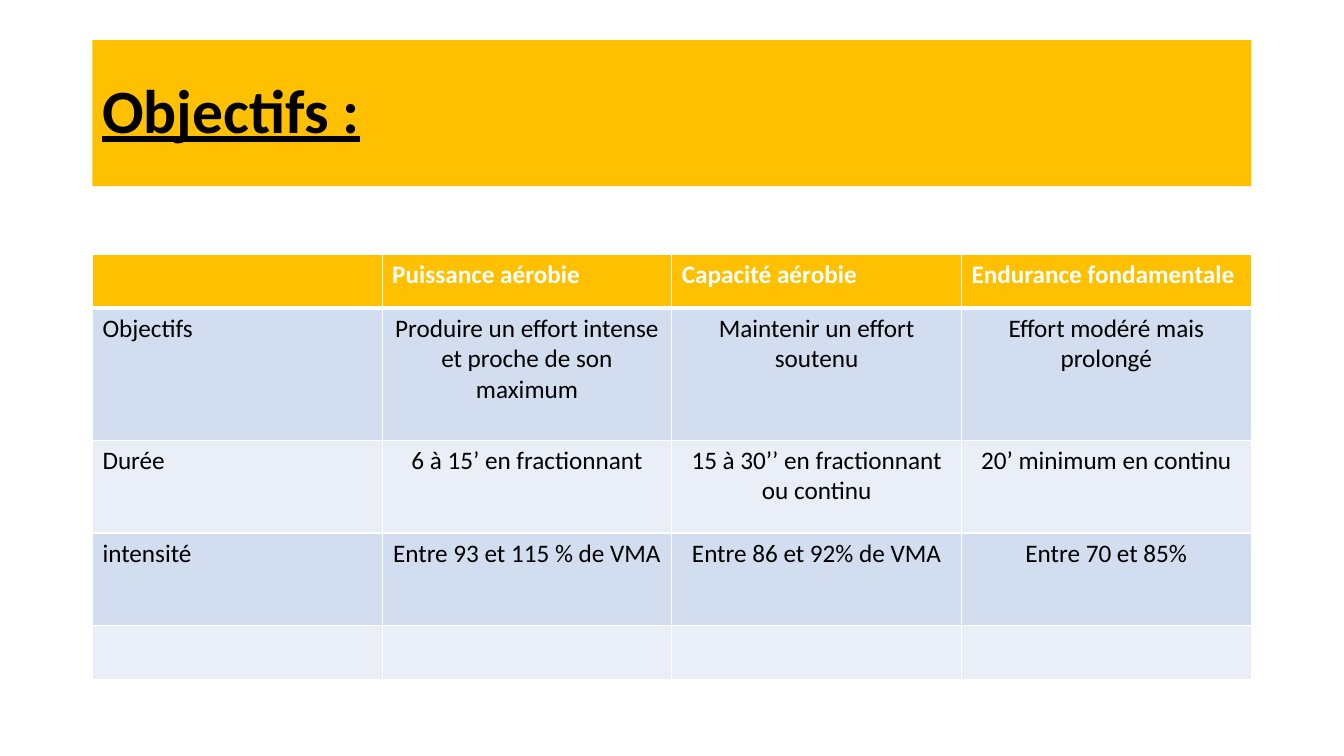
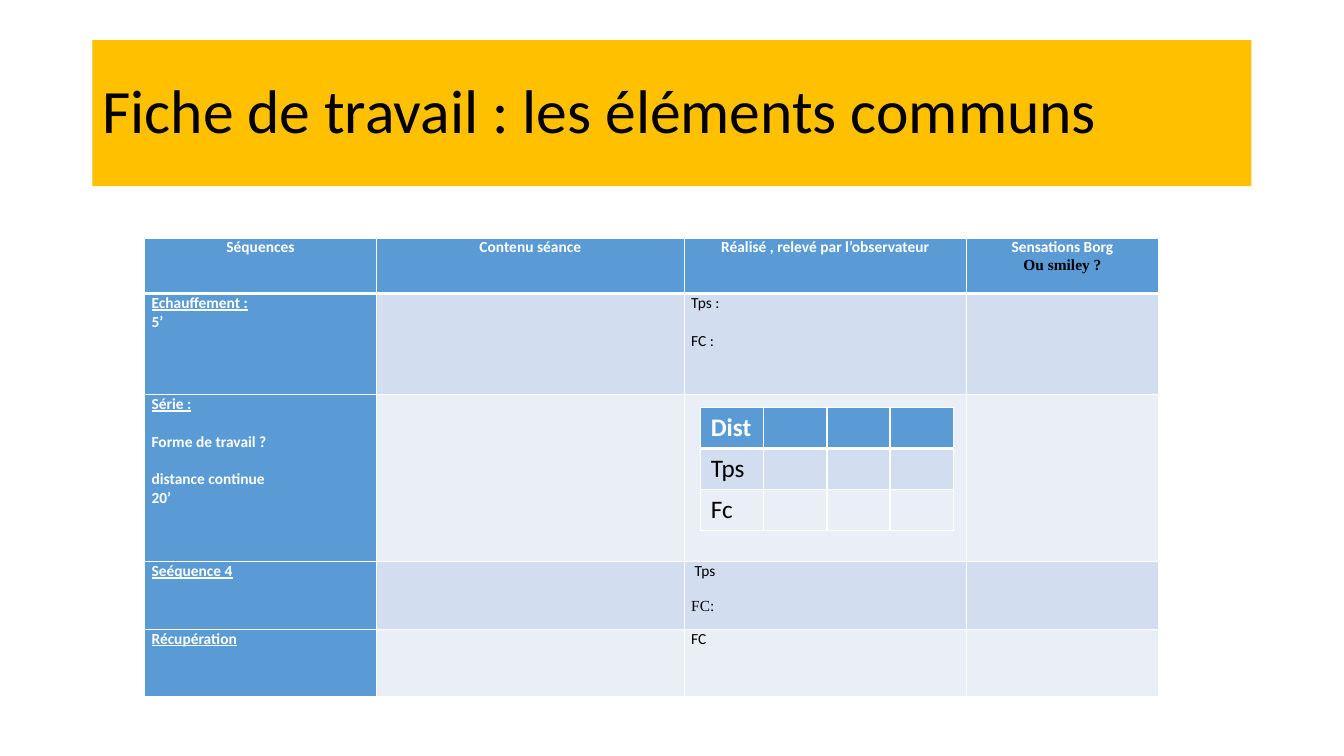
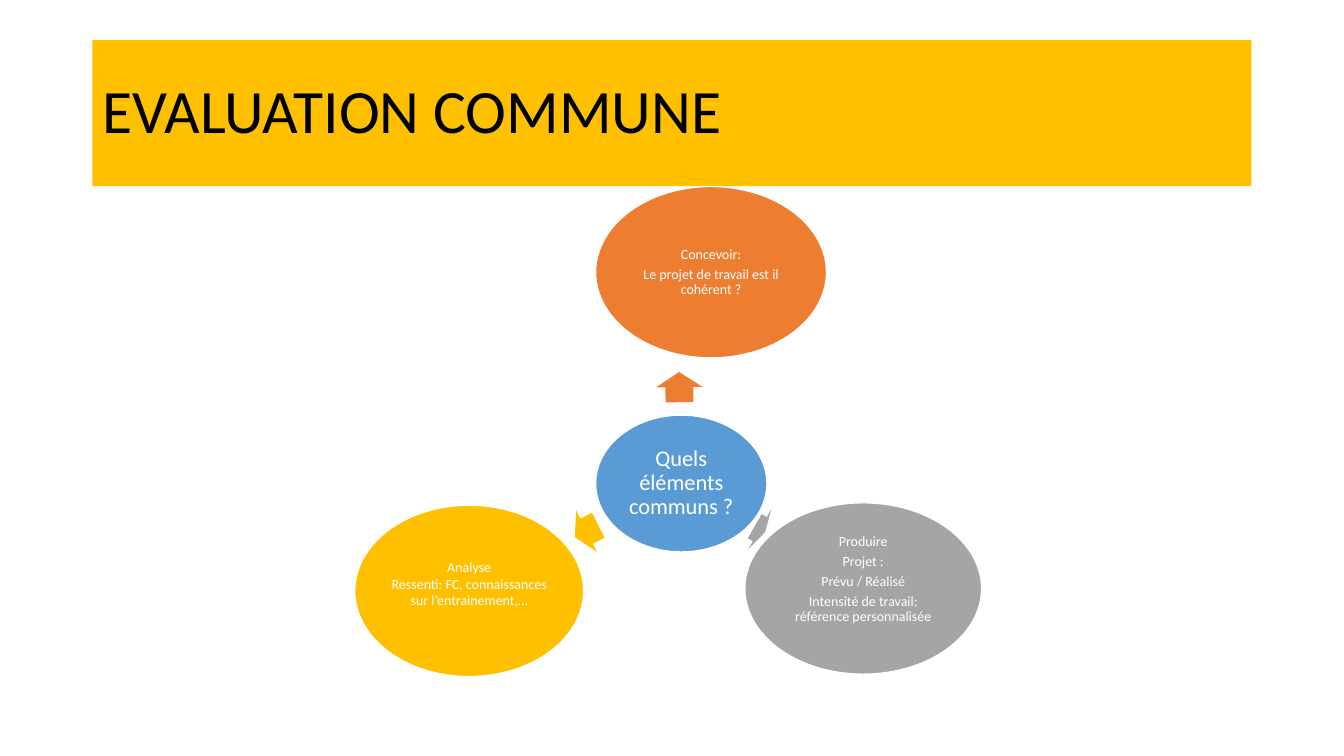
from lxml.etree import SubElement
from pptx import Presentation
from pptx.dml.color import RGBColor as RGB
from pptx.enum.shapes import MSO_SHAPE as SHAPE
from pptx.enum.text import MSO_ANCHOR as ANCHOR, PP_ALIGN as ALIGN
from pptx.oxml.ns import qn
from pptx.util import Cm, Pt

COLORS = {
    "gold": "FFC000", "blue": "5B9BD5", "orange": "ED7D31", "grey": "A5A5A5",
    "band_dark": "D2DEEF", "band_light": "EAEFF7",
    "white": "FFFFFF", "black": "000000",
}
BLANK_LINE = 13.4  # points, one line of 11 pt text


def color(name):
    return RGB.from_string(COLORS[name])


# --- Text ---

def add_text(tf, lines, **style):
    """Write lines, each a string or (string, style changes)."""
    for i, line in enumerate(lines):
        text, changes = (line, {}) if isinstance(line, str) else line
        st = {**style, **changes}
        p = tf.paragraphs[0] if i == 0 else tf.add_paragraph()
        p.alignment = st.get("align", ALIGN.LEFT)
        p.line_spacing = st.get("spacing", 1.0)
        p.space_before = Pt(st.get("before", 0))
        p.space_after = Pt(st.get("after", 0))
        r = p.add_run()
        r.text = text
        r.font.name = st.get("font", "Calibri")
        r.font.size = Pt(st["size"])
        r.font.bold = st.get("bold", False)
        r.font.underline = st.get("underline", False)
        r.font.color.rgb = color(st.get("color", "black"))


# --- Shapes ---

def add_filled(s, kind, box, fill, line=None):
    sp = s.shapes.add_shape(kind, *map(Cm, box))
    sp.shadow.inherit = False
    sp.fill.solid()
    sp.fill.fore_color.rgb = color(fill)
    if line:
        sp.line.color.rgb = color(line)
        sp.line.width = Pt(1)
    else:
        sp.line.fill.background()
    return sp


def add_titled_slide(prs, title, **style):
    s = prs.slides.add_slide(prs.slide_layouts[6])
    sp = add_filled(s, SHAPE.RECTANGLE, (2.33, 1.01, 29.21, 3.68), "gold")
    sp.text_frame.word_wrap = True
    sp.text_frame.vertical_anchor = ANCHOR.MIDDLE
    add_text(sp.text_frame, [title], size=44, spacing=0.9, **style)
    return s


def add_bubble(s, box, fill, lines, size=10, bottom=0.03, **style):
    sp = add_filled(s, SHAPE.OVAL, box, fill, "white")
    tf = sp.text_frame
    tf.word_wrap = True
    tf.vertical_anchor = ANCHOR.MIDDLE
    tf.margin_left = tf.margin_right = tf.margin_top = Cm(0.03)
    tf.margin_bottom = Cm(bottom)
    add_text(tf, lines, size=size, color="white", align=ALIGN.CENTER, **style)


def add_arrow(s, box, fill, rotation):
    sp = add_filled(s, SHAPE.RIGHT_ARROW, box, fill)
    sp.adjustments[0], sp.adjustments[1] = 0.6, 0.5
    sp.rotation = rotation


# --- Tables ---

def set_borders(cell, row):
    widths = {"L": 1, "R": 1, "T": 3 if row == 1 else 1, "B": 3 if row == 0 else 1}
    tc_pr = cell._tc.get_or_add_tcPr()
    for i, (side, width) in enumerate(widths.items()):
        ln = SubElement(tc_pr, qn("a:ln" + side), w=str(Pt(width)))
        fill = SubElement(ln, qn("a:solidFill"))
        SubElement(fill, qn("a:srgbClr"), val=COLORS["white"])
        tc_pr.insert(i, ln)


def add_banded_table(s, left, top, widths, heights, rows, head_fill, size,
                     head_align=ALIGN.LEFT, body_align=ALIGN.LEFT,
                     head_column=False, margins=None):
    """Cells hold lists of lines; rows alternate between two bands."""
    table = s.shapes.add_table(len(heights), len(widths), Cm(left), Cm(top),
                               Cm(sum(widths)), Cm(sum(heights))).table
    for col, width in zip(table.columns, widths):
        col.width = Cm(width)
    for row, height in zip(table.rows, heights):
        row.height = Cm(height)
    for i, row in enumerate(rows):
        for j, lines in enumerate(row):
            cell = table.cell(i, j)
            is_head = i == 0 or (head_column and j == 0)
            band = "band_dark" if i % 2 else "band_light"
            cell.fill.solid()
            cell.fill.fore_color.rgb = color(head_fill if is_head else band)
            set_borders(cell, i)
            if margins:
                cell.margin_left = cell.margin_right = Cm(margins[0])
                cell.margin_top = cell.margin_bottom = Cm(margins[1])
            align = head_align if i == 0 else body_align if j else ALIGN.LEFT
            add_text(cell.text_frame, lines, size=size, bold=is_head, align=align,
                     color="white" if is_head else "black")


# --- Slides ---

def build_goals(prs):
    s = add_titled_slide(prs, "Objectifs :", bold=True, underline=True)
    rows = [
        [[], ["Puissance aérobie"], ["Capacité aérobie"], ["Endurance fondamentale"]],
        [["Objectifs"], ["Produire un effort intense et proche de son maximum"],
         ["Maintenir un effort soutenu"], ["Effort modéré mais prolongé"]],
        [["Durée"], ["6 à 15’ en fractionnant"],
         ["15 à 30’’ en fractionnant ou continu"], ["20’ minimum en continu"]],
        [["intensité"], ["Entre 93 et 115 % de VMA"],
         ["Entre 86 et 92% de VMA"], ["Entre 70 et 85%"]],
        [[]] * 4,
    ]
    add_banded_table(s, 2.33, 6.41, [7.3] * 4, [1.35, 3.33, 2.34, 2.34, 1.35],
                     rows, "gold", 18, body_align=ALIGN.CENTER)


def build_worksheet(prs):
    s = add_titled_slide(prs, "Fiche de travail : les éléments communs")
    under = {"underline": True}
    gap = {"before": BLANK_LINE}
    times = {"font": "Times New Roman"}
    rows = [
        [["Séquences"], ["Contenu séance"], ["Réalisé , relevé par l’observateur"],
         ["Sensations Borg", ("Ou smiley ?", {**times, "color": "black"})]],
        [[("Echauffement :", under), "5’"], [], ["Tps :", ("FC :", gap)], []],
        [[("Série :", under), ("Forme de travail ?", gap),
          ("distance continue", gap), "20’"], [], [], []],
        [[("Seéquence 4", under)], [], [" Tps", ("FC:", {**times, "before": 12})], []],
        [[("Récupération", under)], [], ["FC"], []],
    ]
    add_banded_table(s, 3.64, 6.0, [5.85, 7.75, 7.12, 4.83],
                     [1.4, 2.54, 4.22, 1.7, 1.7], rows, "blue", 11,
                     head_align=ALIGN.CENTER, head_column=True, margins=(0.18, 0))
    # Observer's record inside the series row
    record = [[[label], [], [], []] for label in ("Dist", "Tps", "Fc")]
    add_banded_table(s, 17.66, 10.27, [1.59] * 4, [1.03] * 3, record, "blue", 18)


def build_evaluation(prs):
    s = add_titled_slide(prs, "EVALUATION COMMUNE")
    tight = {"spacing": 0.9, "after": 3.5}
    add_bubble(s, (15.01, 10.46, 4.32, 3.45), "blue",
               ["Quels éléments communs ?"], size=16, spacing=0.9)
    add_arrow(s, (16.74, 9.17, 0.76, 1.17), "orange", 269.2)
    add_bubble(s, (15.01, 4.7, 5.82, 4.32), "orange",
               ["Concevoir:", "Le projet de travail est il cohérent ?"], **tight)
    add_arrow(s, (19.0, 12.75, 0.3, 1.17), "grey", 30)
    add_bubble(s, (18.77, 12.67, 5.97, 4.32), "grey",
               ["Produire", "Projet :", "Prévu / Réalisé",
                "Intensité de travail: référence personnalisée"], bottom=0.5, **tight)
    add_arrow(s, (14.45, 12.8, 0.66, 1.17), "gold", 153.3)
    add_bubble(s, (8.94, 12.73, 5.77, 4.32), "gold",
               ["Analyse", "Ressenti: FC, connaissances sur l’entrainement,…"],
               bottom=0.4)


def main():
    prs = Presentation()
    prs.slide_width, prs.slide_height = Cm(33.87), Cm(19.05)
    build_goals(prs)
    build_worksheet(prs)
    build_evaluation(prs)
    prs.save("out.pptx")


if __name__ == "__main__":
    main()
